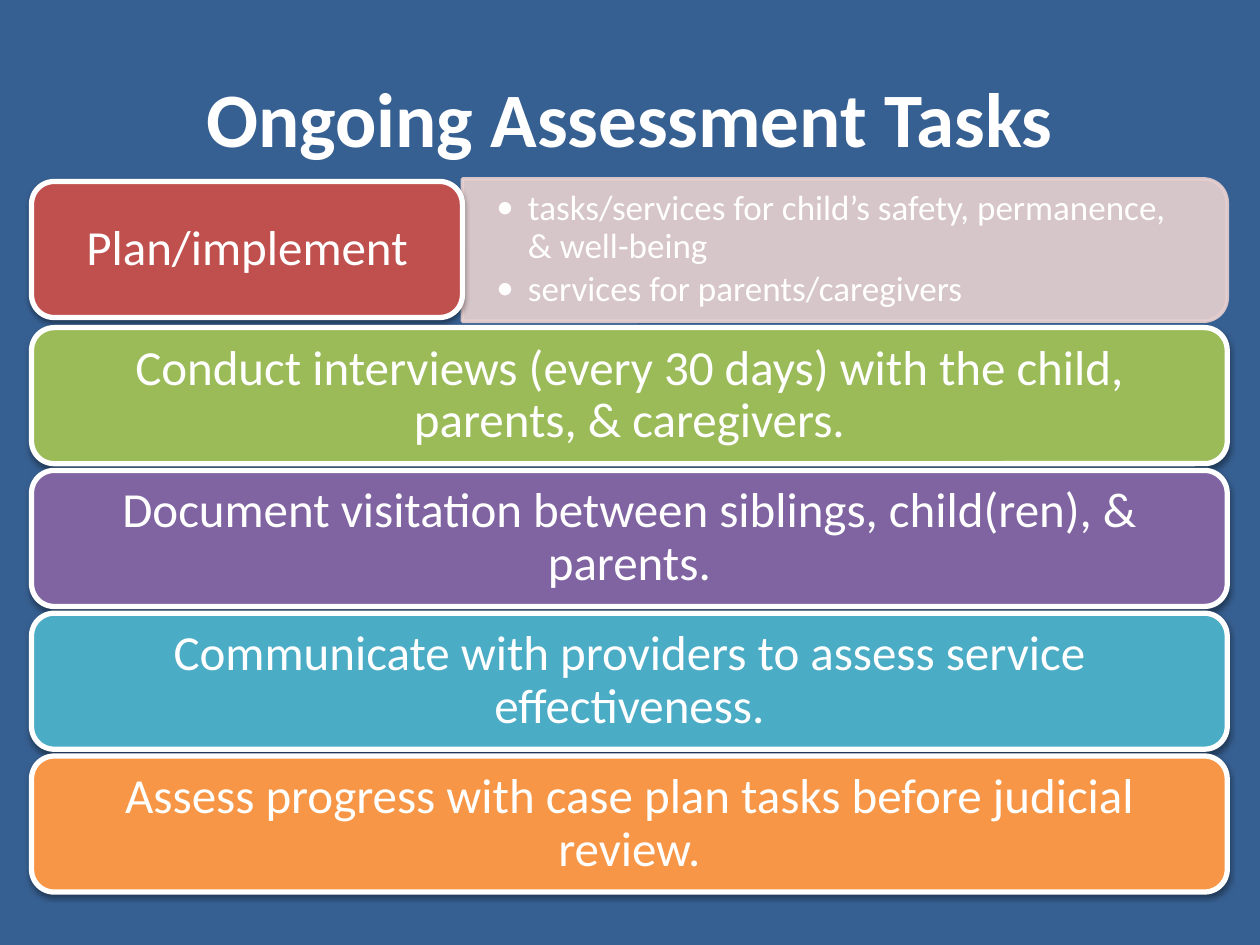
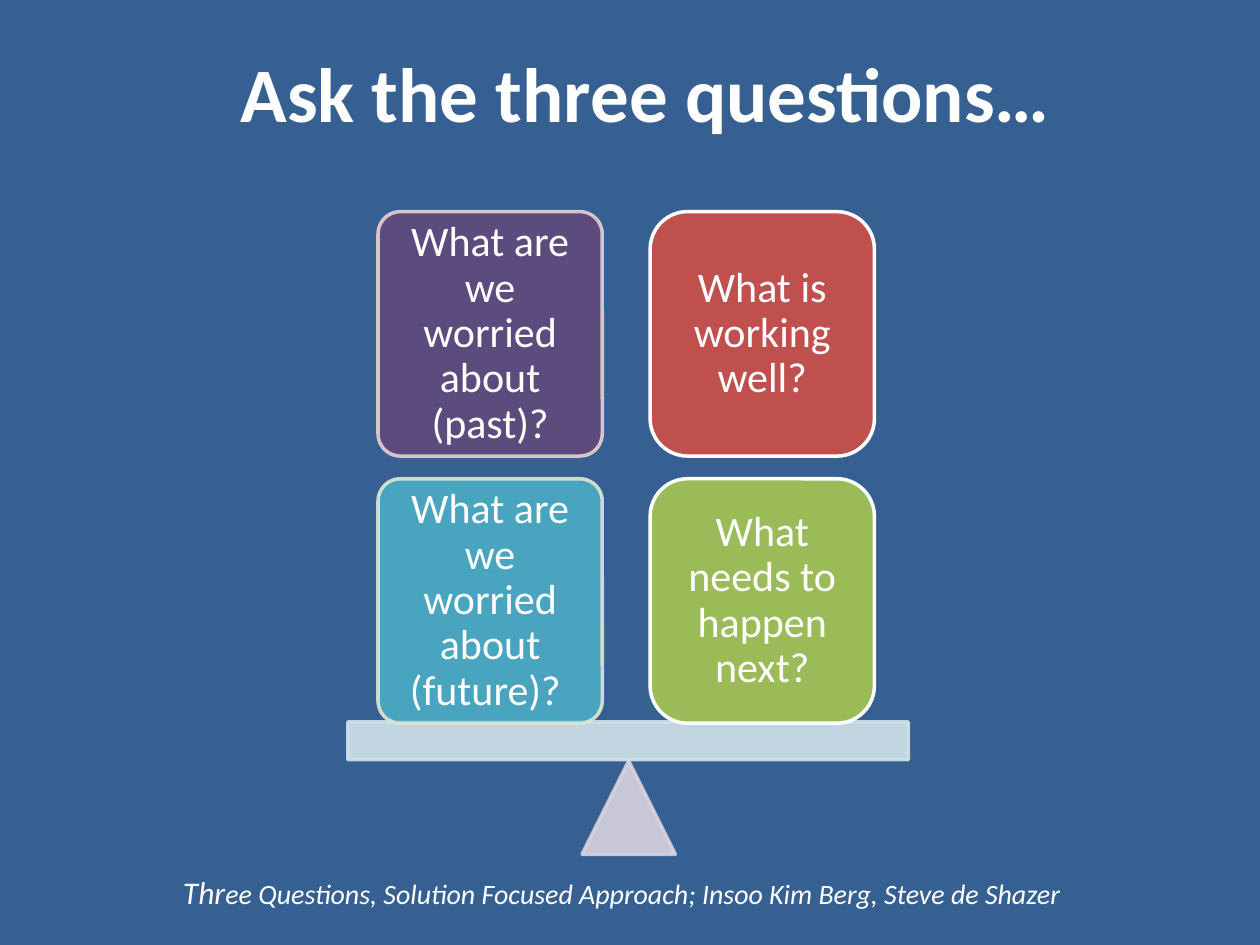
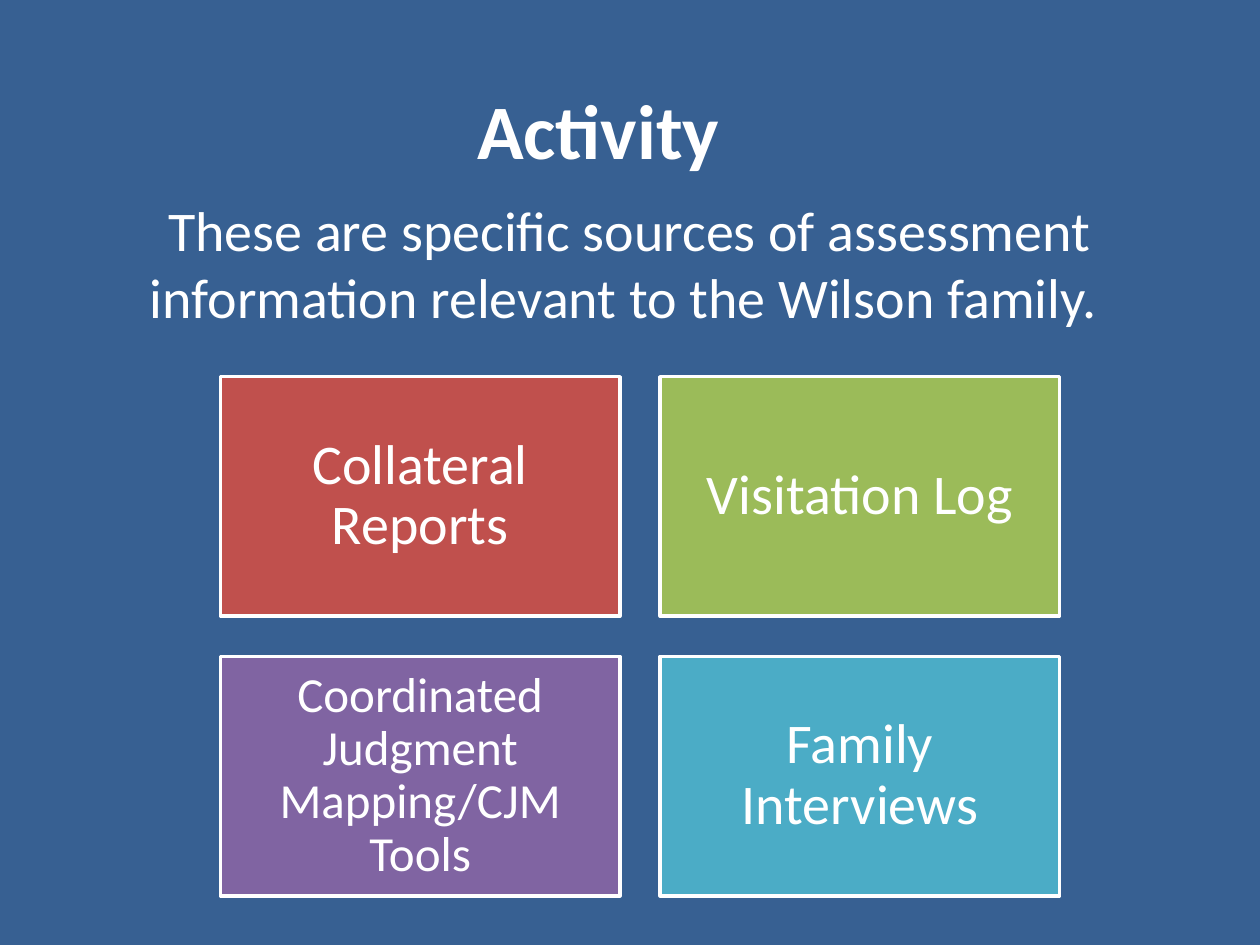
from pptx import Presentation
from pptx.dml.color import RGBColor
from pptx.enum.shapes import MSO_SHAPE
from pptx.enum.text import MSO_ANCHOR, PP_ALIGN
from pptx.oxml import parse_xml
from pptx.oxml.ns import nsdecls, qn
from pptx.oxml.xmlchemy import OxmlElement
from pptx.util import Inches, Pt

# Shared style
FONT = "Calibri"
NAVY = RGBColor(0x37, 0x60, 0x92)
WHITE = RGBColor(0xFF, 0xFF, 0xFF)
RED = RGBColor(0xC0, 0x50, 0x4D)
GREEN = RGBColor(0x9B, 0xBB, 0x59)
PURPLE = RGBColor(0x80, 0x64, 0xA2)
DARK_PURPLE = RGBColor(0x60, 0x4A, 0x7B)
TEAL = RGBColor(0x4B, 0xAC, 0xC6)
ORANGE = RGBColor(0xF7, 0x96, 0x46)
PALE_RED = RGBColor(0xE8, 0xD0, 0xD0)
PALE_GREEN = RGBColor(0xDE, 0xE7, 0xD1)
PALE_PURPLE = RGBColor(0xD8, 0xD3, 0xE0)
PALE_TEAL = RGBColor(0xD0, 0xE3, 0xEA)

SHADOW = (
    f'<a:outerShdw {nsdecls("a")} blurRad="40000" dist="20000" dir="5400000" rotWithShape="0">'
    '<a:srgbClr val="000000"><a:alpha val="38000"/></a:srgbClr></a:outerShdw>'
)


def add_bullet(paragraph):
    """Give a paragraph a hanging round bullet."""
    properties = paragraph._p.get_or_add_pPr()
    properties.set("marL", str(Inches(0.25)))
    properties.set("indent", str(-Inches(0.25)))
    for tag, attribute, value in (("a:buFont", "typeface", FONT), ("a:buChar", "char", "•")):
        element = OxmlElement(tag)
        element.set(attribute, value)
        properties.append(element)


def write_text(shape, *paragraphs, size=28, bold=False, italic=False, align=PP_ALIGN.CENTER,
               anchor=MSO_ANCHOR.MIDDLE, margins=(0.1, 0.05), spacing=1.0, after=0, bullets=False):
    """Write paragraphs; each is a string or a list of (text, size) runs."""
    frame = shape.text_frame
    frame.word_wrap = True
    frame.vertical_anchor = anchor
    frame.margin_left = frame.margin_right = Inches(margins[0])
    frame.margin_top = frame.margin_bottom = Inches(margins[1])
    for index, content in enumerate(paragraphs):
        paragraph = frame.add_paragraph() if index else frame.paragraphs[0]
        paragraph.alignment = align
        paragraph.line_spacing = spacing
        paragraph.space_after = Pt(after)
        if bullets:
            add_bullet(paragraph)
        runs = [(content, size)] if isinstance(content, str) else content
        for text, run_size in runs:
            run = paragraph.add_run()
            run.text = text
            font = run.font
            font.name, font.size, font.color.rgb = FONT, Pt(run_size), WHITE
            font.bold, font.italic = bold, italic


class Deck:
    """Holds the presentation style and the current slide."""

    def __init__(self):
        self.presentation = Presentation()
        self.presentation.slide_width = Inches(10)
        self.presentation.slide_height = Inches(7.5)
        background = self.presentation.slide_master.background.fill
        background.solid()
        background.fore_color.rgb = NAVY
        self.slide = None

    def new_slide(self, title, left, top, width=9):
        self.slide = self.presentation.slides.add_slide(self.presentation.slide_layouts[6])
        self.text(title, left=left, top=top, width=width, height=1.25, size=44, bold=True)

    def text(self, *paragraphs, left, top, width, height, **text_format):
        box = self.slide.shapes.add_textbox(Inches(left), Inches(top), Inches(width), Inches(height))
        write_text(box, *paragraphs, **text_format)

    def shape(self, kind, left, top, width, height, fill, line=WHITE, line_width=2,
              opacity=None, shadow=False, corner=None):
        shape = self.slide.shapes.add_shape(
            kind, Inches(left), Inches(top), Inches(width), Inches(height))
        shape.fill.solid()
        shape.fill.fore_color.rgb = fill
        shape.line.color.rgb = line
        shape.line.width = Pt(line_width)
        shape.shadow.inherit = False
        if corner is not None:
            shape.adjustments[0] = corner
        properties = shape._element.spPr
        if opacity:
            for color in properties.iter(qn("a:srgbClr")):
                alpha = OxmlElement("a:alpha")
                alpha.set("val", str(opacity * 1000))
                color.append(alpha)
        if shadow:
            properties.find(qn("a:effectLst")).append(parse_xml(SHADOW))
        return shape

    def card(self, text, kind, left, top, width, height, fill, size=28, margins=(0.1, 0.1), **look):
        shape = self.shape(kind, left, top, width, height, fill, **look)
        write_text(shape, text, size=size, margins=margins, spacing=0.9)


def build_tasks(deck):
    deck.new_slide("Ongoing Assessment Tasks", 0.5, 0.3)

    # Detail panel beside the first task
    panel = deck.shape(MSO_SHAPE.ROUND_2_SAME_RECTANGLE, 6.14, -1.05, 1.13, 6.07,
                       PALE_RED, line=PALE_RED, opacity=90)
    panel.rotation = 90
    deck.text("tasks/services for child’s safety, permanence, & well-being",
              "services for parents/caregivers",
              left=3.67, top=1.47, width=6.02, height=1.02, size=20, align=PP_ALIGN.LEFT,
              margins=(0.27, 0.14), spacing=0.9, after=3, bullets=True)

    # Task bars: a short one, then four of full width
    bar_look = dict(margins=(0.12, 0.06), line_width=3, shadow=True)
    deck.card("Plan/implement", MSO_SHAPE.ROUNDED_RECTANGLE, 0.25, 1.44, 3.42, 1.08, RED, **bar_look)
    tasks = [
        ("Conduct interviews (every 30 days) with the child, parents, & caregivers.", GREEN),
        ("Document visitation between siblings, child(ren), & parents.", PURPLE),
        ("Communicate with providers to assess service effectiveness.", TEAL),
        ("Assess progress with case plan tasks before judicial review.", ORANGE),
    ]
    for row, (task, color) in enumerate(tasks):
        deck.card(task, MSO_SHAPE.ROUNDED_RECTANGLE, 0.25, 2.6 + row * 3.4 / 3, 9.49, 1.08,
                  color, **bar_look)


def build_questions(deck):
    deck.new_slide("Ask the three questions…", 0, 0.1, width=10.25)
    deck.text([("Thr", 18), ("ee Questions, Solution Focused Approach; Insoo Kim Berg, Steve de Shazer", 16)],
              left=0.81, top=6.88, width=8.25, height=0.4, italic=True, anchor=MSO_ANCHOR.TOP)

    # Balance: pivot and beam
    deck.shape(MSO_SHAPE.ISOSCELES_TRIANGLE, 4.62, 6.04, 0.74, 0.74,
               PALE_PURPLE, line=PALE_PURPLE, opacity=90)
    deck.shape(MSO_SHAPE.RECTANGLE, 2.76, 5.73, 4.45, 0.3, PALE_TEAL, line=PALE_TEAL, opacity=90)

    # Questions stacked on the beam
    worry_look = dict(opacity=90, corner=0.1)
    questions = [
        ("What are we worried about (past)?", DARK_PURPLE, dict(line=PALE_RED, **worry_look)),
        ("What is working well?", RED, {}),
        ("What are we worried about (future)? ", TEAL, dict(line=PALE_GREEN, **worry_look)),
        ("What needs to happen next?", GREEN, {}),
    ]
    for index, (question, color, look) in enumerate(questions):
        row, column = divmod(index, 2)
        deck.card(question, MSO_SHAPE.ROUNDED_RECTANGLE, 3 + column * 2.16, 1.68 + row * 2.12,
                  1.78, 1.94, color, size=24, **look)


def build_activity(deck):
    deck.new_slide("Activity", 0.25, 0.4)
    deck.text("These are specific sources of assessment information relevant to the Wilson family. ",
              left=0.5, top=1.5, width=9, height=1.4, size=32, anchor=MSO_ANCHOR.TOP)

    # Grid of information sources
    sources = [
        ("Collateral Reports", RED, 32),
        ("Visitation Log", GREEN, 32),
        ("Coordinated Judgment Mapping/CJM Tools", PURPLE, 28),
        ("Family Interviews", TEAL, 32),
    ]
    for index, (source, color, size) in enumerate(sources):
        row, column = divmod(index, 2)
        deck.card(source, MSO_SHAPE.RECTANGLE, 1.75 + column * 3.49, 2.99 + row * 2.22,
                  3.17, 1.9, color, size=size, margins=(0.13, 0.13))


def main():
    deck = Deck()
    build_tasks(deck)
    build_questions(deck)
    build_activity(deck)
    deck.presentation.save("out.pptx")


if __name__ == "__main__":
    main()
